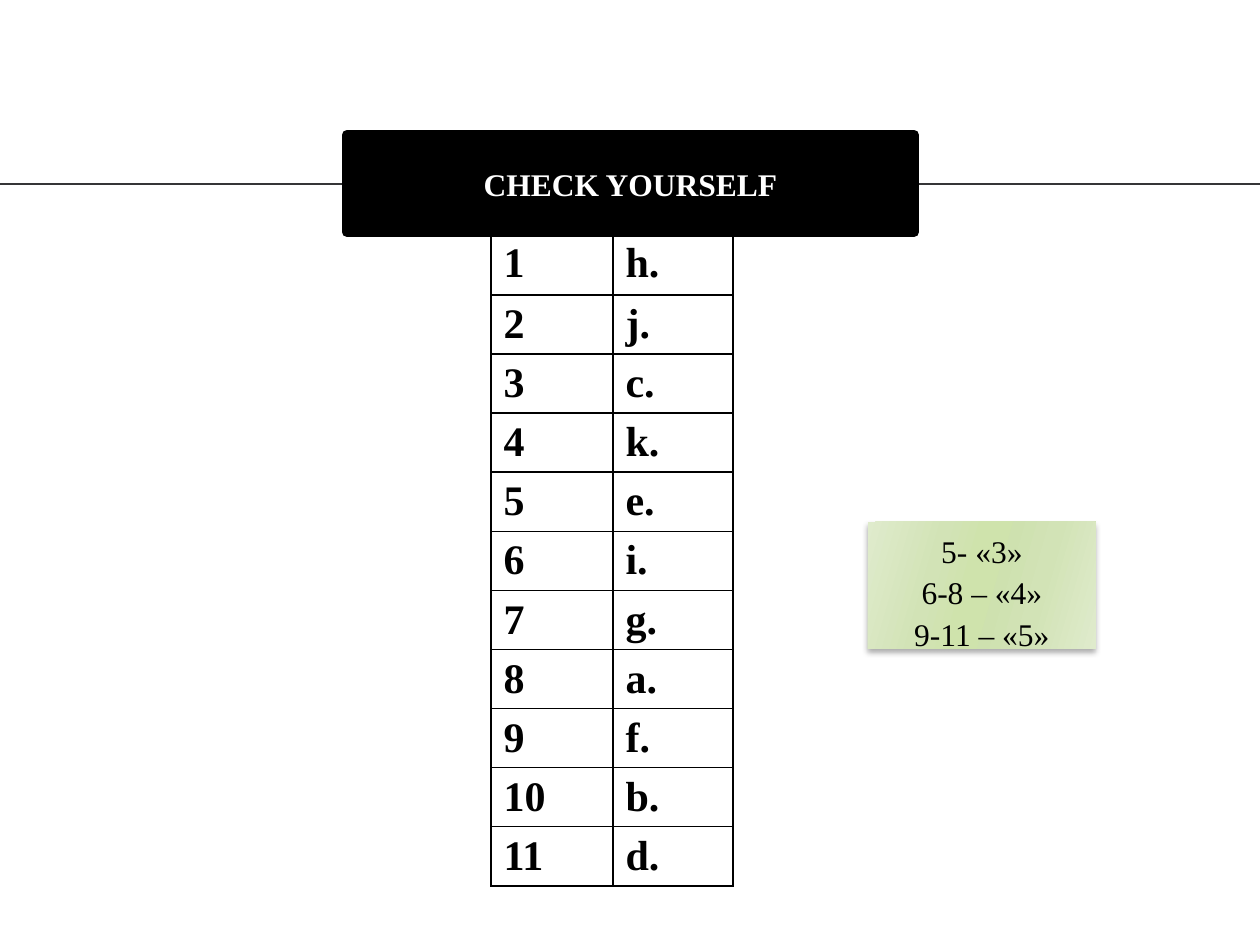
from dataclasses import dataclass

from lxml.etree import SubElement
from pptx import Presentation
from pptx.dml.color import RGBColor
from pptx.enum.shapes import MSO_CONNECTOR, MSO_SHAPE
from pptx.enum.text import MSO_ANCHOR, MSO_AUTO_SIZE, PP_ALIGN
from pptx.oxml.ns import qn
from pptx.util import Emu, Pt

PX = 914400 // 126


@dataclass(frozen=True)
class Theme:
    """Colours, font and type sizes of the slide."""

    font: str = "Times New Roman"
    ink: str = "000000"
    paper: str = "FFFFFF"
    rule: str = "353537"
    title_size: int = 18
    answer_size: int = 24
    grade_size: int = 18
    grade_stops: tuple = (
        (0, "DFEBCC"), (30, "D2E3B6"), (45, "CFE3AC"),
        (55, "CEE1AF"), (73, "D2E3B6"), (100, "DFEBCC"),
    )


def px(*lengths):
    """Turn pixel lengths into EMU."""
    return [Emu(length * PX) for length in lengths]


def assign(target, values):
    """Set each attribute named in values on target."""
    for name, value in values.items():
        setattr(target, name, value)


def add_color(parent, color):
    """Add an RGB colour element to parent."""
    return SubElement(parent, qn("a:srgbClr"), val=color)


class SlideBuilder:
    """Draws elements on the current slide in one style."""

    def __init__(self, slide, theme):
        """Keep the slide and its theme."""
        self.slide = slide
        self.theme = theme

    def fill_text(self, frame, lines, size, color, bold=False, align=None, spacing=1.0):
        """Fill a text frame with one paragraph per line."""
        frame.text = "\n".join(lines)
        for paragraph in frame.paragraphs:
            assign(paragraph, {"alignment": align, "line_spacing": spacing})
            for run in paragraph.runs:
                assign(run.font, {"name": self.theme.font, "size": Pt(size), "bold": bold})
                run.font.color.rgb = RGBColor.from_string(color)

    def rule(self, x1, y1, x2, y2):
        """Draw a thin straight line."""
        rule = self.slide.shapes.add_connector(MSO_CONNECTOR.STRAIGHT, *px(x1, y1, x2, y2))
        rule.line.color.rgb = RGBColor.from_string(self.theme.rule)
        rule.line.width = Pt(1)
        SubElement(rule._element.spPr, qn("a:effectLst"))

    def title(self, text, *box):
        """Format the title placeholder as a dark banner in front of earlier parts."""
        banner = self.slide.shapes.title
        self.slide.shapes._spTree.append(banner._element)
        assign(banner, dict(zip(("left", "top", "width", "height"), px(*box))))
        ink = RGBColor.from_string(self.theme.ink)
        banner.fill.solid()
        banner.fill.fore_color.rgb = ink
        banner.line.color.rgb = ink
        banner.line.width = Pt(6)
        assign(banner.text_frame, {
            "auto_size": MSO_AUTO_SIZE.NONE,
            "vertical_anchor": MSO_ANCHOR.MIDDLE,
            "word_wrap": True,
        })
        self.fill_text(banner.text_frame, [text], self.theme.title_size,
                       self.theme.paper, True, PP_ALIGN.CENTER)

    def border(self, cell):
        """Outline all four sides of a cell."""
        properties = cell._tc.get_or_add_tcPr()
        for side in ("a:lnL", "a:lnR", "a:lnT", "a:lnB"):
            edge = SubElement(properties, qn(side), w=str(Pt(1)))
            add_color(SubElement(edge, qn("a:solidFill")), self.theme.ink)

    def table(self, rows, left, top, widths, heights):
        """Draw a bordered table without fill."""
        frame = self.slide.shapes.add_table(
            len(rows), len(widths), *px(left, top, sum(widths), sum(heights)))
        table = frame.table
        assign(table, {"first_row": False, "horz_banding": False})
        for column, width in zip(table.columns, px(*widths)):
            column.width = width
        for row, height, texts in zip(table.rows, px(*heights), rows):
            row.height = height
            for cell, text in zip(row.cells, texts):
                self.border(cell)
                cell.fill.background()
                self.fill_text(cell.text_frame, [text], self.theme.answer_size,
                               self.theme.ink, True)

    def shade(self, shape):
        """Give a shape the grade gradient."""
        shape.fill.gradient()
        shape.fill.gradient_angle = 344
        stops = shape._element.spPr.find(qn("a:gradFill")).find(qn("a:gsLst"))
        for stop in list(stops):
            stops.remove(stop)
        for position, color in self.theme.grade_stops:
            add_color(SubElement(stops, qn("a:gs"), pos=str(position * 1000)), color)

    def cast_shadow(self, shape):
        """Give a shape a soft shadow below it."""
        shape.shadow.inherit = False
        effects = shape._element.spPr.find(qn("a:effectLst"))
        shadow = SubElement(effects, qn("a:outerShdw"), blurRad=str(Pt(3.5)),
                            dist=str(Pt(2.2)), dir="5400000", rotWithShape="0")
        SubElement(add_color(shadow, self.theme.ink), qn("a:alpha"), val="32000")

    def card(self, lines, *box):
        """Draw a shaded card with centred lines."""
        card = self.slide.shapes.add_shape(MSO_SHAPE.RECTANGLE, *px(*box))
        self.shade(card)
        card.line.fill.background()
        self.cast_shadow(card)
        assign(card.text_frame, {
            "word_wrap": True,
            "auto_size": MSO_AUTO_SIZE.SHAPE_TO_FIT_TEXT,
            "vertical_anchor": MSO_ANCHOR.TOP,
        })
        self.fill_text(card.text_frame, lines, self.theme.grade_size,
                       self.theme.ink, False, PP_ALIGN.CENTER, 1.1)


def main():
    """Build the answer key slide."""
    deck = Presentation()
    deck.slide_width, deck.slide_height = px(1260, 945)
    builder = SlideBuilder(deck.slides.add_slide(deck.slide_layouts[5]), Theme())

    answers = [(str(number), f"{letter}.") for number, letter in enumerate("hjckeigafbd", 1)]
    builder.rule(0, 184, 1260, 184)
    builder.table(answers, 491, 234, [122, 120], [61] + [59] * (len(answers) - 1))
    builder.title("CHECK YOURSELF", 347, 135, 567, 97)
    builder.card(["5- «3»", "6-8 – «4»", "9-11 – «5»"], 868, 522, 228, 127)
    deck.save("out.pptx")


if __name__ == "__main__":
    main()
